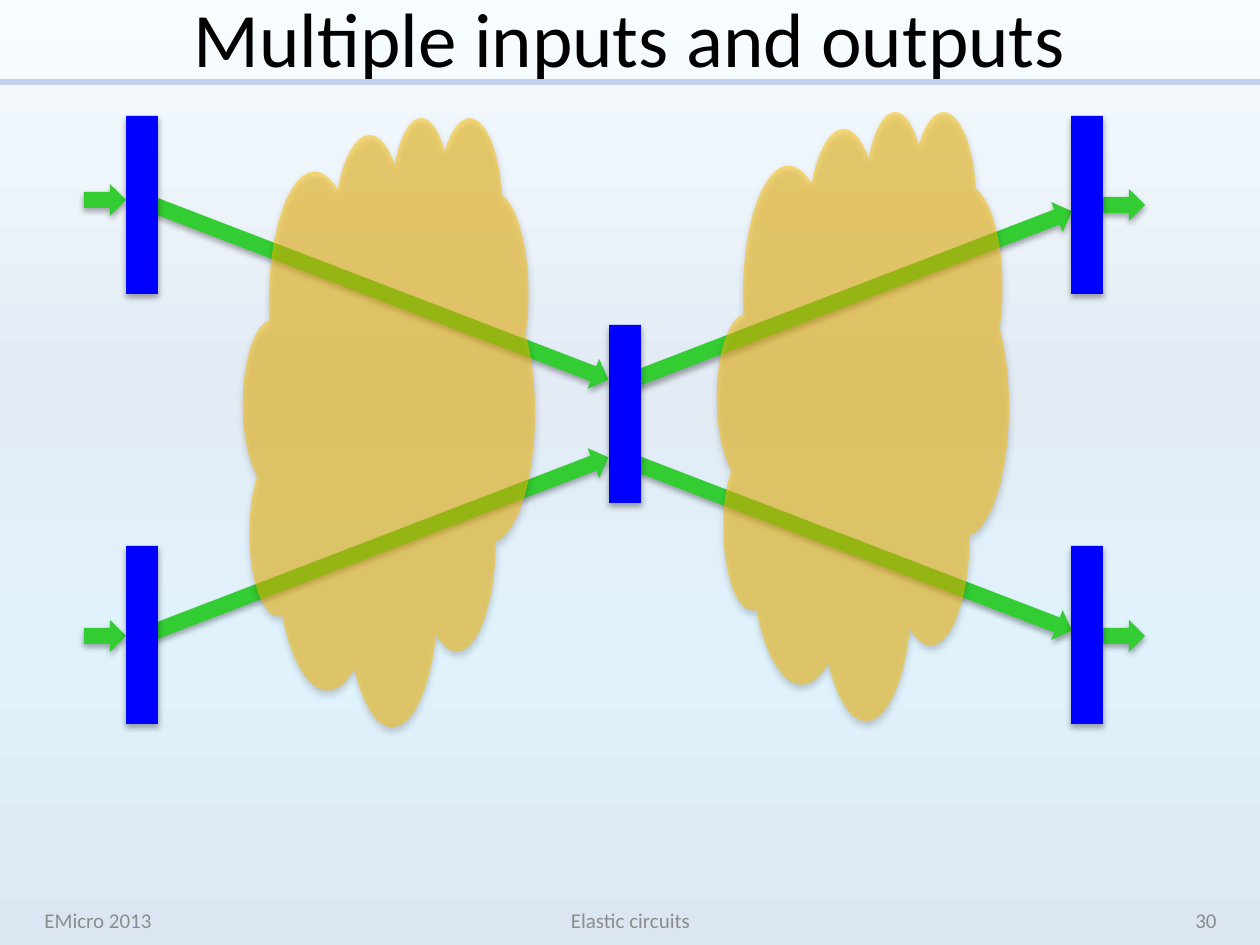
"""Build the slide on elastic circuits with multiple inputs and outputs."""
from lxml.etree import SubElement
from pptx import Presentation
from pptx.dml.color import RGBColor
from pptx.enum.shapes import MSO_CONNECTOR, MSO_SHAPE
from pptx.enum.text import MSO_ANCHOR, MSO_AUTO_SIZE, PP_ALIGN
from pptx.oxml.ns import qn
from pptx.util import Pt

PX = 914400 / 126
COLORS = {"title": "000000", "footer": "8C8C8C", "rule": "C2D1ED", "arrow": "33CC33",
          "register": "0000FF", "cloud": "FFC000", "shadow": "000000"}
BACKGROUND = {0: "F7FDFF", 40: "E3EBF5", 70: "E0F3FC", 100: "DCE6F2"}
SHADOW = {"blurRad": Pt(3.5), "dist": Pt(2.2), "dir": 90 * 60000, "rotWithShape": 0}


def add_block(kind, box, color, rotation=0):
    shape = slide.shapes.add_shape(kind, *[round(value * PX) for value in box])
    shape.rotation = rotation
    shape.fill.solid()
    shape.fill.fore_color.rgb = RGBColor.from_string(COLORS[color])
    shape.line.fill.background()
    shape.shadow.inherit = False
    effects = shape._element.spPr.find(qn("a:effectLst"))
    shadow = SubElement(effects, qn("a:outerShdw"), {key: str(value) for key, value in SHADOW.items()})
    shadow_color = SubElement(shadow, qn("a:srgbClr"), val=COLORS["shadow"])
    SubElement(shadow_color, qn("a:alpha"), val="32000")
    return shape


def write_text(shape, text, box, size, color, alignment):
    for name, value in zip(("left", "top", "width", "height"), box):
        setattr(shape, name, round(value * PX))
    frame = shape.text_frame
    frame.text = text
    frame_format = {"word_wrap": True, "auto_size": MSO_AUTO_SIZE.NONE,
                    "vertical_anchor": MSO_ANCHOR.MIDDLE}
    for name, value in frame_format.items():
        setattr(frame, name, value)
    paragraph = frame.paragraphs[0]
    paragraph.alignment = alignment
    font = paragraph.runs[0].font
    for name, value in {"name": "Calibri", "size": Pt(size)}.items():
        setattr(font, name, value)
    font.color.rgb = RGBColor.from_string(COLORS[color])


presentation = Presentation()
presentation.slide_width = round(1260 * PX)
presentation.slide_height = round(945 * PX)
slide = presentation.slides.add_slide(presentation.slide_layouts[5])

background_fill = slide.background.fill
background_fill.gradient()
background_fill.gradient_angle = 270
stops = slide._element.find(".//" + qn("a:gsLst"))
for stop in list(stops):
    stops.remove(stop)
for position, color in BACKGROUND.items():
    stop = SubElement(stops, qn("a:gs"), pos=str(position * 1000))
    SubElement(stop, qn("a:srgbClr"), val=color)

rule_y = round(82 * PX)
rule = slide.shapes.add_connector(MSO_CONNECTOR.STRAIGHT, 0, rule_y, presentation.slide_width, rule_y)
rule.line.color.rgb = RGBColor.from_string(COLORS["rule"])
rule.line.width = Pt(4)
SubElement(rule._element.spPr, qn("a:effectLst"))

write_text(slide.shapes.title, "Multiple inputs and outputs", (63, 0, 1134, 73), 44, "title", PP_ALIGN.CENTER)

for left, top in [(84, 184), (84, 620), (1103, 620), (1103, 189)]:
    add_block(MSO_SHAPE.RIGHT_ARROW, (left, top, 42, 32), "arrow")

for left, top, width, rotation in [(125, 274, 500, 21), (125, 531, 500, -21),
                                   (604, 282, 484, -21), (604, 528, 484, 21)]:
    add_block(MSO_SHAPE.RIGHT_ARROW, (left, top, width, 32), "arrow", rotation)

for left, top in [(126, 116), (126, 546), (609, 325), (1071, 116), (1071, 546)]:
    add_block(MSO_SHAPE.RECTANGLE, (left, top, 32, 178), "register")

for left, top in [(243, 116), (717, 110)]:
    cloud = add_block(MSO_SHAPE.CLOUD, (left, top, 292, 609), "cloud")
    cloud_color = cloud._element.spPr.find(qn("a:solidFill"))[0]
    SubElement(cloud_color, qn("a:alpha"), val="50000")

for text, left, width, alignment in [("EMicro 2013", 32, 294, PP_ALIGN.LEFT),
                                     ("Elastic circuits", 431, 399, PP_ALIGN.CENTER),
                                     ("30", 935, 294, PP_ALIGN.RIGHT)]:
    footer = slide.shapes.add_textbox(0, 0, 0, 0)
    write_text(footer, text, (left, 895, width, 50), 12, "footer", alignment)

presentation.save("out.pptx")
